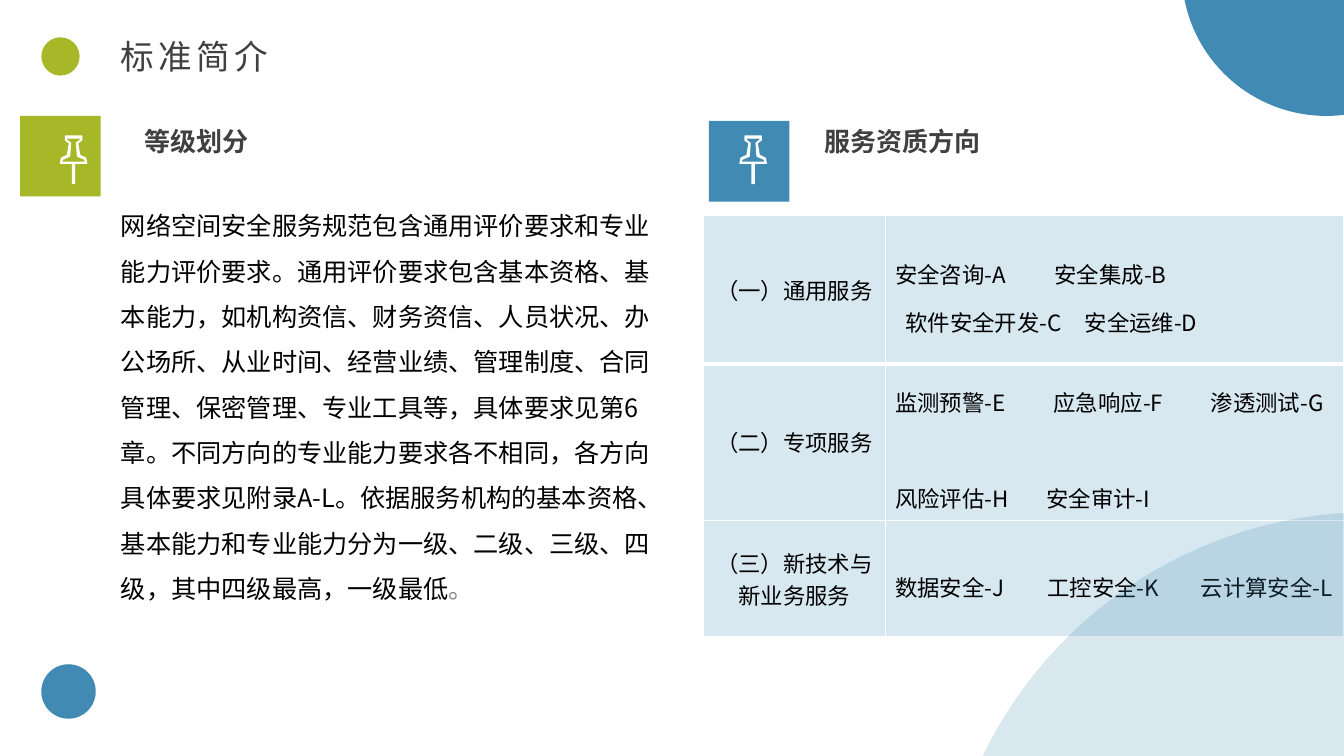
from dataclasses import dataclass
from lxml import etree
from pptx import Presentation
from pptx.dml.color import RGBColor
from pptx.enum.shapes import MSO_SHAPE as Preset
from pptx.enum.text import MSO_ANCHOR as Anchor, MSO_AUTO_SIZE as AutoSize, PP_ALIGN as Align
from pptx.oxml.ns import qn
from pptx.util import Inches, Pt


@dataclass(frozen=True)
class Theme:
    font: str = "Noto Sans CJK SC"
    blue: str = "418AB3"
    green: str = "A6B727"
    pale: str = "D8E8F1"
    white: str = "FFFFFF"
    black: str = "000000"
    gray: str = "808080"
    dark: str = "404040"
    title: float = 24
    heading: float = 18.6
    body: float = 18
    cell: float = 16


THEME = Theme()
PIN_INNER = [(13, 2), (6, 2), (6, 4), (10, 7), (9, 20), (2, 23), (1, 26), (13, 26)]
PIN_OUTER = [(13, 0), (5, 0), (5, 4), (9, 7), (7, 19), (1, 22), (0, 27), (12, 27), (12, 47)]
PIN_AXIS = 13

BODY = (
    "网络空间安全服务规范包含通用评价要求和专业能力评价要求。"
    "通用评价要求包含基本资格、基本能力，如机构资信、财务资信、人员状况、办公场所、"
    "从业时间、经营业绩、管理制度、合同管理、保密管理、专业工具等，具体要求见第6章。"
    "不同方向的专业能力要求各不相同，各方向具体要求见附录A-L。"
    "依据服务机构的基本资格、基本能力和专业能力分为一级、二级、三级、四级，"
    "其中四级最高，一级最低"
)
SERVICES = [
    ("（一）通用服务", 1.47, 0, [
        (["安全咨询-A", "安全集成-B"], [1.58]),
        (["", "软件安全开发-C", "安全运维-D"], [0.1, 1.88]),
    ]),
    ("（二）专项服务", 1.55, 34, [
        (["监测预警-E", "应急响应-F", "渗透测试-G"], [1.57, 3.13]),
        (["风险评估-H", "安全审计-I"], [1.5]),
    ]),
    ("（三）新技术与新业务服务", 1.16, 0, [
        (["数据安全-J", "工控安全-K", "云计算安全-L"], [1.51, 3.03]),
    ]),
]


def rgb(color):
    return RGBColor.from_string(color)


def write(paragraph, text, size, color, bold=False, align=None, leading=None, tracking=0):
    if align is not None:
        paragraph.alignment = align
    if leading:
        paragraph.line_spacing = leading
    run = paragraph.add_run()
    run.text = text
    font = run.font
    font.size, font.bold, font.name = Pt(size), bold, THEME.font
    font.color.rgb = rgb(color)
    props = run._r.get_or_add_rPr()
    etree.SubElement(props, qn("a:ea"), typeface=THEME.font)
    if tracking:
        props.set("spc", str(tracking * 100))


def text_box(slide, left, top, width, height):
    frame = slide.shapes.add_textbox(
        Inches(left), Inches(top), Inches(width), Inches(height)).text_frame
    frame.word_wrap = True
    frame.auto_size = AutoSize.SHAPE_TO_FIT_TEXT
    return frame.paragraphs[0]


def add_block(slide, preset, left, top, side, color, opacity=100):
    block = slide.shapes.add_shape(
        preset, Inches(left), Inches(top), Inches(side), Inches(side))
    block.shadow.inherit = False
    block.fill.solid()
    block.fill.fore_color.rgb = rgb(color)
    block.line.fill.background()
    if opacity < 100:
        tint = block.fill._xPr.find(qn("a:solidFill"))[0]
        etree.SubElement(tint, qn("a:alpha"), val=str(opacity * 1000))


def mirrored(half):
    return half + [(2 * PIN_AXIS - x, y) for x, y in reversed(half)]


def add_pin(slide, left, top):
    outer, inner = mirrored(PIN_OUTER), mirrored(PIN_INNER)
    outline = slide.shapes.build_freeform(*outer[0], scale=Inches(0.01))
    outline.add_line_segments(outer[1:], close=True)
    outline.move_to(*inner[0])
    outline.add_line_segments(inner[1:], close=True)
    pin = outline.convert_to_shape(Inches(left), Inches(top))
    pin.shadow.inherit = False
    pin.fill.solid()
    pin.fill.fore_color.rgb = rgb(THEME.white)
    pin.line.color.rgb = rgb(THEME.white)
    pin.line.width = Pt(1)


def add_heading(slide, left, top, text, color, pin_left, pin_top, text_left):
    add_block(slide, Preset.RECTANGLE, left, top, 0.8, color)
    add_pin(slide, pin_left, pin_top)
    write(text_box(slide, text_left, 1.2, 2.12, 0.41), text,
          size=THEME.heading, color=THEME.dark, bold=True)


def add_body(slide, left, top, width, height):
    paragraph = text_box(slide, left, top, width, height)
    write(paragraph, BODY, size=THEME.body, color=THEME.black, leading=1.5)
    write(paragraph, "。", size=THEME.body, color=THEME.gray)


def style_cell(cell, bottom):
    cell.vertical_anchor = Anchor.MIDDLE
    cell.fill.solid()
    cell.fill.fore_color.rgb = rgb(THEME.pale)
    props = cell._tc.get_or_add_tcPr()
    for index, (side, width) in enumerate([("L", 1), ("R", 1), ("T", 1), ("B", bottom)]):
        border = etree.Element(qn(f"a:ln{side}"), w=str(Pt(width)))
        fill = etree.SubElement(border, qn("a:solidFill"))
        etree.SubElement(fill, qn("a:srgbClr"), val=THEME.white)
        props.insert(index, border)


def set_tabs(paragraph, stops):
    tabs = etree.SubElement(paragraph._p.get_or_add_pPr(), qn("a:tabLst"))
    for stop in stops:
        etree.SubElement(tabs, qn("a:tab"), pos=str(Inches(stop)), algn="l")


def add_services(slide, left, top, widths):
    height = sum(service[1] for service in SERVICES)
    table = slide.shapes.add_table(
        len(SERVICES), len(widths), Inches(left), Inches(top),
        Inches(sum(widths)), Inches(height)).table
    table.first_row = table.horz_banding = False
    for column, width in zip(table.columns, widths):
        column.width = Inches(width)
    for index, (category, row_height, gap, lines) in enumerate(SERVICES):
        table.rows[index].height = Inches(row_height)
        label, details = table.rows[index].cells
        for cell in (label, details):
            style_cell(cell, bottom=3 if index == 0 else 1)
        write(label.text_frame.paragraphs[0], category,
              size=THEME.cell, color=THEME.black, align=Align.CENTER)
        for number, (names, stops) in enumerate(lines):
            frame = details.text_frame
            paragraph = frame.add_paragraph() if number else frame.paragraphs[0]
            write(paragraph, "\t".join(names), size=THEME.cell, color=THEME.black, leading=1.5)
            if number and gap:
                paragraph.space_before = Pt(gap)
            set_tabs(paragraph, stops)


def add_circles(slide):
    for left, top, side, color, opacity in [
        (9.32, 5.08, 8.57, THEME.blue, 20),
        (11.72, -1.72, 2.87, THEME.blue, 100),
        (0.41, 6.59, 0.54, THEME.blue, 100),
        (0.41, 0.37, 0.38, THEME.green, 100),
    ]:
        add_block(slide, Preset.FLOWCHART_CONNECTOR, left, top, side, color, opacity)


def add_title(slide, left, top, width, height):
    write(text_box(slide, left, top, width, height), "标准简介", size=THEME.title,
          color=THEME.dark, align=Align.JUSTIFY, tracking=3)


def main():
    deck = Presentation()
    deck.slide_width, deck.slide_height = Inches(13.33), Inches(7.5)
    slide = deck.slides.add_slide(deck.slide_layouts[6])
    add_heading(slide, 0.2, 1.15, "等级划分", THEME.green, 0.6, 1.35, 1.33)
    add_heading(slide, 7.03, 1.2, "服务资质方向", THEME.blue, 7.34, 1.35, 8.08)
    add_body(slide, 1.1, 1.89, 5.48, 4.1)
    add_services(slide, 6.98, 2.14, [1.8, 4.55])
    add_circles(slide)
    add_title(slide, 1.1, 0.31, 2.56, 0.5)
    deck.save("out.pptx")


if __name__ == "__main__":
    main()
